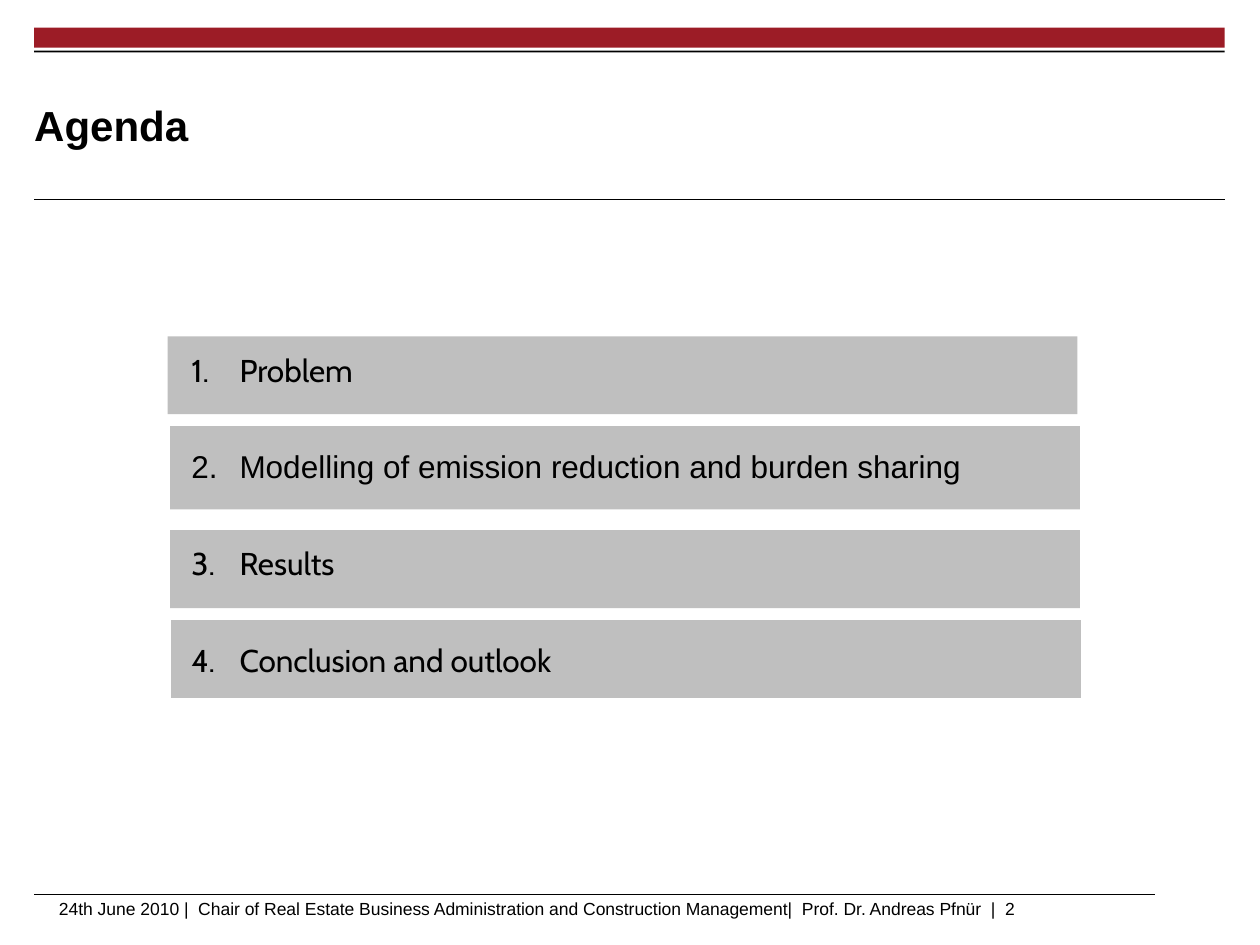
import pptx
import pptx.dml.color
import pptx.enum.shapes
import pptx.enum.text
import pptx.oxml.ns
import pptx.util
from lxml import etree
from pptx.util import Cm

BLACK = "000000"
RED = "9C1C26"
GREY = "BFBFBF"
MARGIN = 0.69
CONTENT_WIDTH = 24
BAR_WIDTH = 18.34
AGENDA_BARS = [(3.38, 6.78, 1.57), (3.43, 8.59, 1.68), (3.43, 10.69, 1.57), (3.45, 12.5, 1.57)]
AGENDA_ITEMS = [
    ("Problem", "Cabin"),
    ("Modelling of emission reduction and burden sharing", "Arial"),
    ("Results", "Cabin"),
    ("Conclusion and outlook", "Cabin"),
]
FOOTER = (
    "24th June 2010 |  Chair of Real Estate Business Administration and "
    "Construction Management|  Prof. Dr. Andreas Pfnür  |  2"
)


def color(hex_code):
    return pptx.dml.color.RGBColor.from_string(hex_code)


def add_bar(slide, left, top, width, height, fill):
    bar = slide.shapes.add_shape(
        pptx.enum.shapes.MSO_SHAPE.RECTANGLE, Cm(left), Cm(top), Cm(width), Cm(height)
    )
    bar.shadow.inherit = False
    bar.fill.solid()
    bar.fill.fore_color.rgb = color(fill)
    bar.line.fill.background()


def add_rule(slide, left, top, width):
    rule = slide.shapes.add_connector(
        pptx.enum.shapes.MSO_CONNECTOR.STRAIGHT, Cm(left), Cm(top), Cm(left + width), Cm(top)
    )
    rule.line.color.rgb = color(BLACK)
    rule.line.width = pptx.util.Pt(0.6)
    etree.SubElement(rule._element.spPr, pptx.oxml.ns.qn("a:effectLst"))


def add_frame(slide, left, top, width, height):
    frame = slide.shapes.add_textbox(Cm(left), Cm(top), Cm(width), Cm(height)).text_frame
    frame.word_wrap = True
    return frame


def write(paragraph, text, size=18, font="Arial", bold=False):
    run = paragraph.add_run()
    run.text = text
    run.font.size = pptx.util.Pt(size)
    run.font.name = font
    run.font.bold = bold
    run.font.color.rgb = color(BLACK)


def number(paragraph):
    properties = paragraph._p.get_or_add_pPr()
    properties.set("marL", str(Cm(0.97)))
    properties.set("indent", str(-Cm(0.97)))
    etree.SubElement(properties, pptx.oxml.ns.qn("a:buFont"), typeface="Cabin")
    etree.SubElement(properties, pptx.oxml.ns.qn("a:buAutoNum"), type="arabicPeriod")


def add_title(slide, text):
    frame = add_frame(slide, MARGIN, 1.35, 19.1, 2.34)
    frame.margin_left = frame.margin_right = frame.margin_top = frame.margin_bottom = 0
    frame.vertical_anchor = pptx.enum.text.MSO_ANCHOR.MIDDLE
    write(frame.paragraphs[0], text, size=24, bold=True)


def add_agenda(slide):
    for left, top, height in AGENDA_BARS:
        add_bar(slide, left, top, BAR_WIDTH, height, GREY)
    frame = add_frame(slide, 3.61, 6.93, 18.16, 7.14)
    for index, (item, font) in enumerate(AGENDA_ITEMS):
        paragraph = frame.add_paragraph() if index else frame.paragraphs[0]
        number(paragraph)
        paragraph.line_spacing = pptx.util.Pt(22)
        paragraph.space_after = pptx.util.Pt(33.3)
        write(paragraph, item, font=font)


def main():
    """Build the agenda slide and save it."""
    presentation = pptx.Presentation()
    presentation.slide_width = Cm(25.4)
    presentation.slide_height = Cm(19.05)
    slide = presentation.slides.add_slide(presentation.slide_layouts[6])
    add_bar(slide, MARGIN, 0.56, CONTENT_WIDTH, 0.4, RED)
    add_bar(slide, MARGIN, 1.02, CONTENT_WIDTH, 0.04, BLACK)
    add_rule(slide, MARGIN, 4.03, CONTENT_WIDTH)
    add_rule(slide, MARGIN, 18.03, 22.6)
    add_title(slide, "Agenda")
    add_agenda(slide)
    write(add_frame(slide, 0.94, 17.98, 23.7, 0.64).paragraphs[0], FOOTER, size=10)
    presentation.save("out.pptx")


if __name__ == "__main__":
    main()
